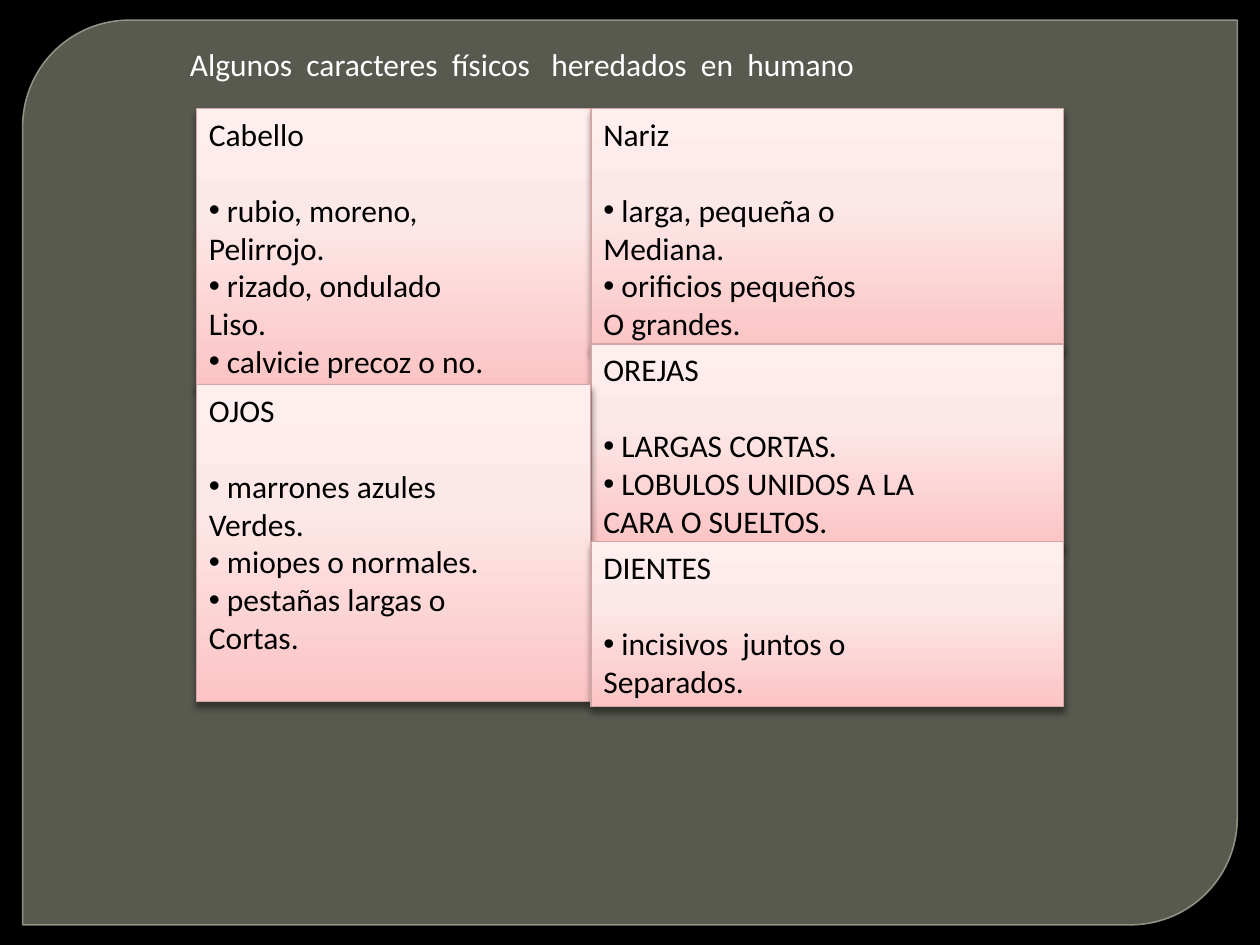
import pptx
import pptx.dml.color
import pptx.enum.shapes
import pptx.enum.text
import pptx.oxml.ns
import pptx.util
from lxml import etree

COLORS = {
    "background": "000000", "panel": "888B7B", "panel_line": "9DA090",
    "card_line": "D3A6A6", "title": "FFFFFF", "text": "000000", "shadow": "000000",
}
CARD_GRADIENT = [(0, "FCC4C4"), (62, "FDE8E8"), (100, "FEEEEE")]
FONT = {"name": "Calibri", "size": pptx.util.Pt(18)}
LINE_HEIGHT = pptx.util.Pt(22)

TITLE = "Algunos  caracteres  físicos   heredados  en  humano"
TITLE_BOX = (1.41, 0.31, 7.14, 0.4)
PANEL_BOX = (0.18, 0.16, 9.64, 7.18)

# Columns: left, width
COLUMNS = [(1.56, 3.13), (4.69, 3.75)]
# Cards from back to front: column, top, height, heading, lines ("•" starts a bullet)
CARDS = [
    (0, 0.86, 2.22, "Cabello", ["• rubio, moreno,", "Pelirrojo.", "• rizado, ondulado",
                                "Liso.", "• calvicie precoz o no."]),
    (1, 0.86, 1.92, "Nariz", ["• larga, pequeña o", "Mediana.",
                              "• orificios pequeños", "O grandes."]),
    (1, 2.73, 1.62, "OREJAS", ["• LARGAS CORTAS.", "• LOBULOS UNIDOS A LA",
                               "CARA O SUELTOS."]),
    (0, 3.05, 2.52, "OJOS", ["• marrones azules", "Verdes.", "• miopes o normales.",
                             "• pestañas largas o", "Cortas."]),
    (1, 4.3, 1.31, "DIENTES", ["• incisivos  juntos o", "Separados."]),
]


def rgb(name):
    return pptx.dml.color.RGBColor.from_string(COLORS[name])


def inches(box):
    return [pptx.util.Inches(length) for length in box]


def add_element(parent, tag, **attributes):
    values = {key: str(value) for key, value in attributes.items()}
    return etree.SubElement(parent, pptx.oxml.ns.qn(tag), values)


def set_alpha(color_format, percent):
    add_element(color_format.find(".//" + pptx.oxml.ns.qn("a:srgbClr")),
                "a:alpha", val=percent * 1000)


def add_shape(slide, kind, box, line_color, line_width):
    shape = slide.shapes.add_shape(kind, *inches(box))
    shape.shadow.inherit = False
    shape.line.color.rgb = rgb(line_color)
    shape.line.width = pptx.util.Pt(line_width)
    return shape


def write(paragraph, text, color):
    paragraph.alignment = pptx.enum.text.PP_ALIGN.LEFT
    run = paragraph.add_run()
    run.text = text.removeprefix("•")
    for attribute, value in FONT.items():
        setattr(run.font, attribute, value)
    run.font.color.rgb = rgb(color)
    if text.startswith("•"):
        properties = paragraph._p.get_or_add_pPr()
        add_element(properties, "a:buFont", typeface="Arial")
        add_element(properties, "a:buChar", char="•")


def set_frame(frame, wrap):
    settings = {
        "word_wrap": wrap,
        "auto_size": pptx.enum.text.MSO_AUTO_SIZE.SHAPE_TO_FIT_TEXT,
        "vertical_anchor": pptx.enum.text.MSO_ANCHOR.TOP,
    }
    for attribute, value in settings.items():
        setattr(frame, attribute, value)


def add_panel(slide):
    panel = add_shape(slide, pptx.enum.shapes.MSO_SHAPE.ROUND_2_DIAG_RECTANGLE,
                      PANEL_BOX, "panel_line", 0.87)
    panel.adjustments[0] = 0.118
    panel.adjustments[1] = 0
    panel.fill.solid()
    panel.fill.fore_color.rgb = rgb("panel")
    properties = panel._element.spPr
    set_alpha(properties.find(pptx.oxml.ns.qn("a:solidFill")), 65)
    set_alpha(properties.find(pptx.oxml.ns.qn("a:ln")), 88)


def style_card(card):
    """Give the card its three-stop gradient and its soft shadow."""
    properties = card._element.spPr
    card.fill.gradient()
    gradient = properties.find(pptx.oxml.ns.qn("a:gradFill"))
    for child in list(gradient):
        gradient.remove(child)
    stops = add_element(gradient, "a:gsLst")
    for position, color in CARD_GRADIENT:
        stop = add_element(stops, "a:gs", pos=position * 1000)
        add_element(stop, "a:srgbClr", val=color)
    add_element(gradient, "a:lin", ang=270 * 60000, scaled=0)

    effects = properties.find(pptx.oxml.ns.qn("a:effectLst"))
    shadow = add_element(effects, "a:outerShdw", blurRad=pptx.util.Pt(4),
                         dist=pptx.util.Pt(3), dir=90 * 60000, rotWithShape=0)
    add_element(shadow, "a:srgbClr", val=COLORS["shadow"])
    set_alpha(shadow, 43)


def add_card(slide, column, top, height, heading, lines):
    left, width = COLUMNS[column]
    card = add_shape(slide, pptx.enum.shapes.MSO_SHAPE.RECTANGLE,
                     (left, top, width, height), "card_line", 0.75)
    style_card(card)
    frame = card.text_frame
    set_frame(frame, True)
    write(frame.paragraphs[0], heading, "text")
    frame.paragraphs[0].space_after = LINE_HEIGHT
    for line in lines:
        write(frame.add_paragraph(), line, "text")


def main():
    presentation = pptx.Presentation()
    presentation.slide_width, presentation.slide_height = inches((10, 7.5))
    slide = presentation.slides.add_slide(presentation.slide_layouts[6])
    slide.background.fill.solid()
    slide.background.fill.fore_color.rgb = rgb("background")

    add_panel(slide)
    title = slide.shapes.add_textbox(*inches(TITLE_BOX))
    set_frame(title.text_frame, False)
    write(title.text_frame.paragraphs[0], TITLE, "title")
    for card in CARDS:
        add_card(slide, *card)
    presentation.save("out.pptx")


if __name__ == "__main__":
    main()
